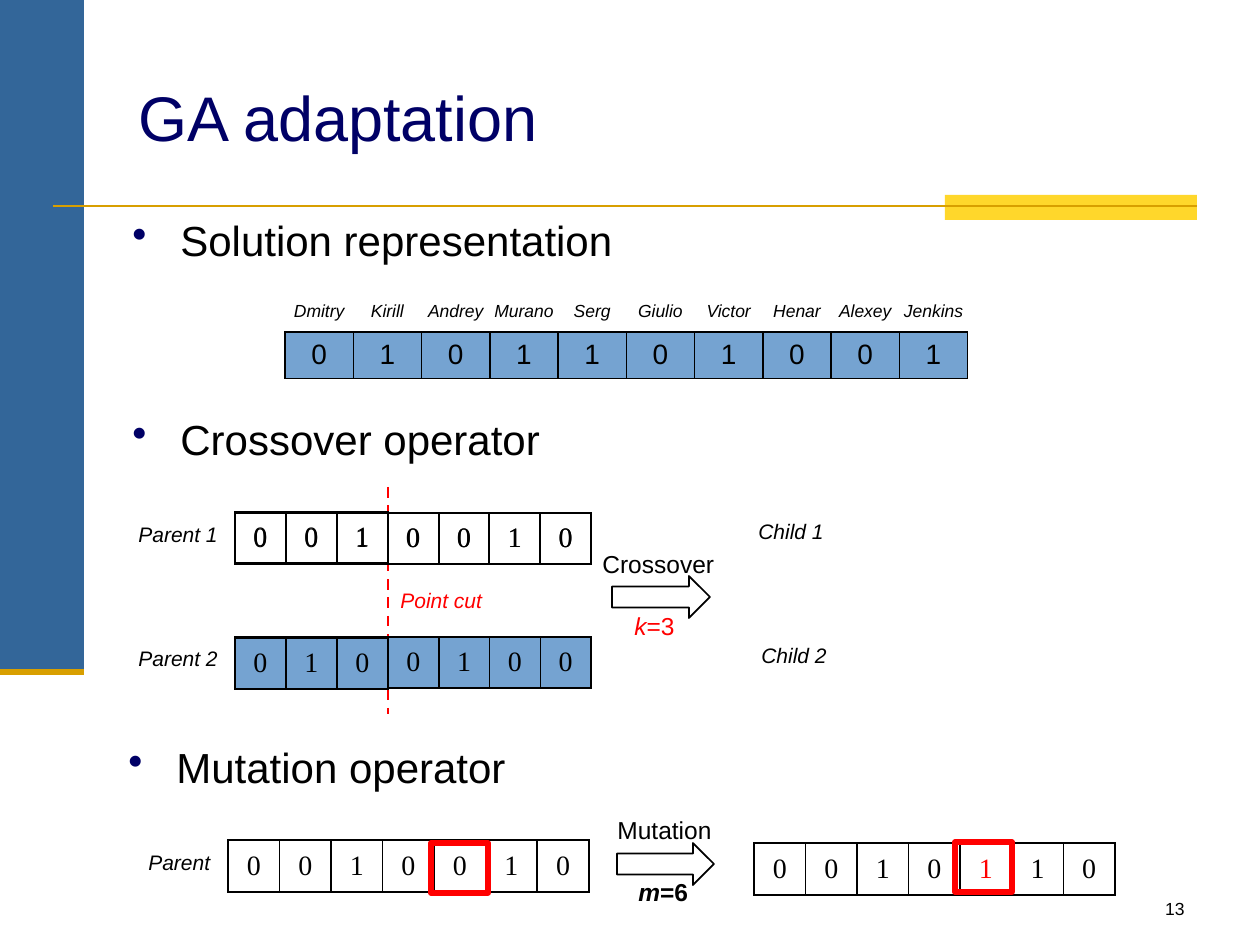
from lxml import etree
from pptx import Presentation, util as u
from pptx.dml.color import RGBColor
from pptx.enum import dml, shapes, text
from pptx.oxml.ns import qn

PX_PER_INCH = 126
COLORS = {
    "navy": "000066", "black": "000000", "red": "FF0000", "white": "FFFFFF",
    "band": "336699", "yellow": "FFD72B", "gold": "D89F00", "gene": "75A3D1",
}
SANS, SERIF = "Arial", "Times New Roman"

NAMES = ["Dmitry", "Kirill", "Andrey", "Murano", "Serg",
         "Giulio", "Victor", "Henar", "Alexey", "Jenkins"]
SOLUTION = "0101101001"
PARENT_1, PARENT_2 = "0010010", "0100100"
MUTANT_BEFORE, MUTANT_AFTER = "0010010", "0010110"
CUT = 3
MUTATED = 4

BANDS = [((0, 0, 84, 672), "band"), ((945, 195, 252, 25), "yellow")]
RULES = [((53, 206), (1197, 206), 1.5), ((0, 672), (84, 672), 3.5)]
BULLETS = [
    ("Solution representation", (120, 208)),
    ("Crossover operator", (120, 407)),
    ("Mutation operator", (116, 735)),
]
LABELS = [
    ("Parent 1", (126, 515, 106, 38), "black"),
    ("Parent 2", (126, 639, 106, 38), "black"),
    ("Child 1", (746, 512, 91, 38), "black"),
    ("Child 2", (749, 636, 91, 38), "black"),
    ("Point cut", (388, 581, 108, 38), "red"),
    ("Parent", (136, 843, 91, 38), "black"),
]
OPERATORS = [
    {"name": ("Crossover", (590, 543, 137, 43)), "arrow": (612, 576, 98, 42),
     "setting": ("k", "=3", (622, 605, 66, 43)), "color": "red", "bold": False},
    {"name": ("Mutation", (605, 809, 120, 43)), "arrow": (617, 843, 97, 42),
     "setting": ("m", "=6", (626, 871, 76, 43)), "color": "black", "bold": True},
]
MARKERS = [(431, 843, 57, 50), (955, 842, 57, 50)]


def px(n):
    return u.Emu(round(n * 914400 / PX_PER_INCH))


def rgb(name):
    return RGBColor.from_string(COLORS[name])


def style(paragraph, size, color="black", font=SANS, italic=False, bold=False):
    for run in paragraph.runs:
        run.font.size = u.Pt(size)
        run.font.name = font
        run.font.color.rgb = rgb(color)
        run.font.italic = italic
        run.font.bold = bold


def add_text(slide, words, box, size, wrap=False, **look):
    frame = slide.shapes.add_textbox(*map(px, box)).text_frame
    frame.word_wrap = wrap
    frame.text = words
    style(frame.paragraphs[0], size, **look)
    return frame


def add_figure(slide, preset, box, fill=None, line=None, width=1):
    figure = slide.shapes.add_shape(preset, *map(px, box))
    figure.shadow.inherit = False
    if fill:
        figure.fill.solid()
        figure.fill.fore_color.rgb = rgb(fill)
    else:
        figure.fill.background()
    if line:
        figure.line.color.rgb = rgb(line)
        figure.line.width = u.Pt(width)
    else:
        figure.line.fill.background()


def add_line(slide, start, end, color, width, dash=None):
    line = slide.shapes.add_connector(
        shapes.MSO_CONNECTOR.STRAIGHT, *map(px, start + end))
    line.line.color.rgb = rgb(color)
    line.line.width = u.Pt(width)
    if dash:
        line.line.dash_style = dash
    etree.SubElement(line._element.spPr, qn("a:effectLst"))


def set_borders(cell, color):
    properties = cell._tc.get_or_add_tcPr()
    for side in ("a:lnL", "a:lnR", "a:lnT", "a:lnB"):
        border = etree.SubElement(properties, qn(side), w=str(u.Pt(1)))
        if color:
            fill = etree.SubElement(border, qn("a:solidFill"))
            etree.SubElement(fill, qn("a:srgbClr"), val=COLORS[color])
        else:
            etree.SubElement(border, qn("a:noFill"))


def add_row(slide, values, box, size=16, font=SERIF, fill=None, border="black",
            italic=False, tight=False, red=None):
    table = slide.shapes.add_table(1, len(values), *map(px, box)).table
    table.first_row = table.horz_banding = False
    for i, value in enumerate(values):
        table.columns[i].width = px(box[2] / len(values))
        cell = table.cell(0, i)
        set_borders(cell, border)
        if fill:
            cell.fill.solid()
            cell.fill.fore_color.rgb = rgb(fill)
        else:
            cell.fill.background()
        if tight:
            cell.margin_left = cell.margin_right = 0
        cell.vertical_anchor = text.MSO_ANCHOR.MIDDLE
        cell.text = value
        paragraph = cell.text_frame.paragraphs[0]
        paragraph.alignment = text.PP_ALIGN.CENTER
        style(paragraph, size, "red" if i == red else "black", font, italic)


def add_bullet(slide, words, corner):
    frame = add_text(slide, words, corner + (1071, 66), 24, wrap=True)
    paragraph = frame.paragraphs[0]
    paragraph.space_before = u.Pt(5)
    properties = paragraph._p.get_or_add_pPr()
    properties.set("marL", str(px(48)))
    properties.set("indent", str(-px(48)))
    tint = etree.SubElement(properties, qn("a:buClr"))
    etree.SubElement(tint, qn("a:srgbClr"), val=COLORS["navy"])
    etree.SubElement(properties, qn("a:buChar"), char="•")


def add_operator(slide, operator):
    add_figure(slide, shapes.MSO_SHAPE.RIGHT_ARROW, operator["arrow"], line="black")
    add_text(slide, *operator["name"], 14)
    symbol, value, box = operator["setting"]
    look = {"color": operator["color"], "bold": operator["bold"]}
    paragraph = add_text(slide, symbol, box, 14).paragraphs[0]
    paragraph.add_run().text = value
    style(paragraph, 14, **look)
    paragraph.runs[0].font.italic = True


def main():
    deck = Presentation()
    deck.slide_width, deck.slide_height = px(1260), px(945)
    slide = deck.slides.add_slide(deck.slide_layouts[6])

    for box, fill in BANDS:
        add_figure(slide, shapes.MSO_SHAPE.RECTANGLE, box, fill)
    for start, end, width in RULES:
        add_line(slide, start, end, "gold", width)
    title = add_text(slide, "GA adaptation", (126, 38, 1071, 157), 36, wrap=True, color="navy")
    title.vertical_anchor = text.MSO_ANCHOR.MIDDLE
    number = add_text(slide, "13", (935, 892, 262, 32), 10, wrap=True)
    number.paragraphs[0].alignment = text.PP_ALIGN.RIGHT

    add_row(slide, SOLUTION, (285, 332, 683, 45), font=SANS, fill="gene")
    add_row(slide, NAMES, (285, 295, 683, 33), 10, SANS, border=None, italic=True, tight=True)

    parents = [(PARENT_1, 513, None, (512, 513)), (PARENT_2, 637, "gene", (638, 637))]
    for genes, top, fill, _ in parents:
        add_row(slide, genes, (235, top, 356, 51), fill=fill)
    add_line(slide, (388, 487), (388, 714), "red", 1.5, dml.MSO_LINE.DASH)
    for genes, _, fill, (head_top, tail_top) in parents:
        add_row(slide, genes[:CUT], (235, head_top, 153, 51), fill=fill)
        add_row(slide, genes[CUT:], (388, tail_top, 203, 51), fill=fill)

    add_row(slide, MUTANT_BEFORE, (228, 840, 361, 52))
    add_row(slide, MUTANT_AFTER, (754, 843, 361, 52), red=MUTATED)
    for bullet in BULLETS:
        add_bullet(slide, *bullet)
    for words, box, color in LABELS:
        add_text(slide, words, box, 12, color=color, italic=True)
    for operator in OPERATORS:
        add_operator(slide, operator)
    for box in MARKERS:
        add_figure(slide, shapes.MSO_SHAPE.RECTANGLE, box, line="red", width=3)

    deck.save("out.pptx")


if __name__ == "__main__":
    main()
